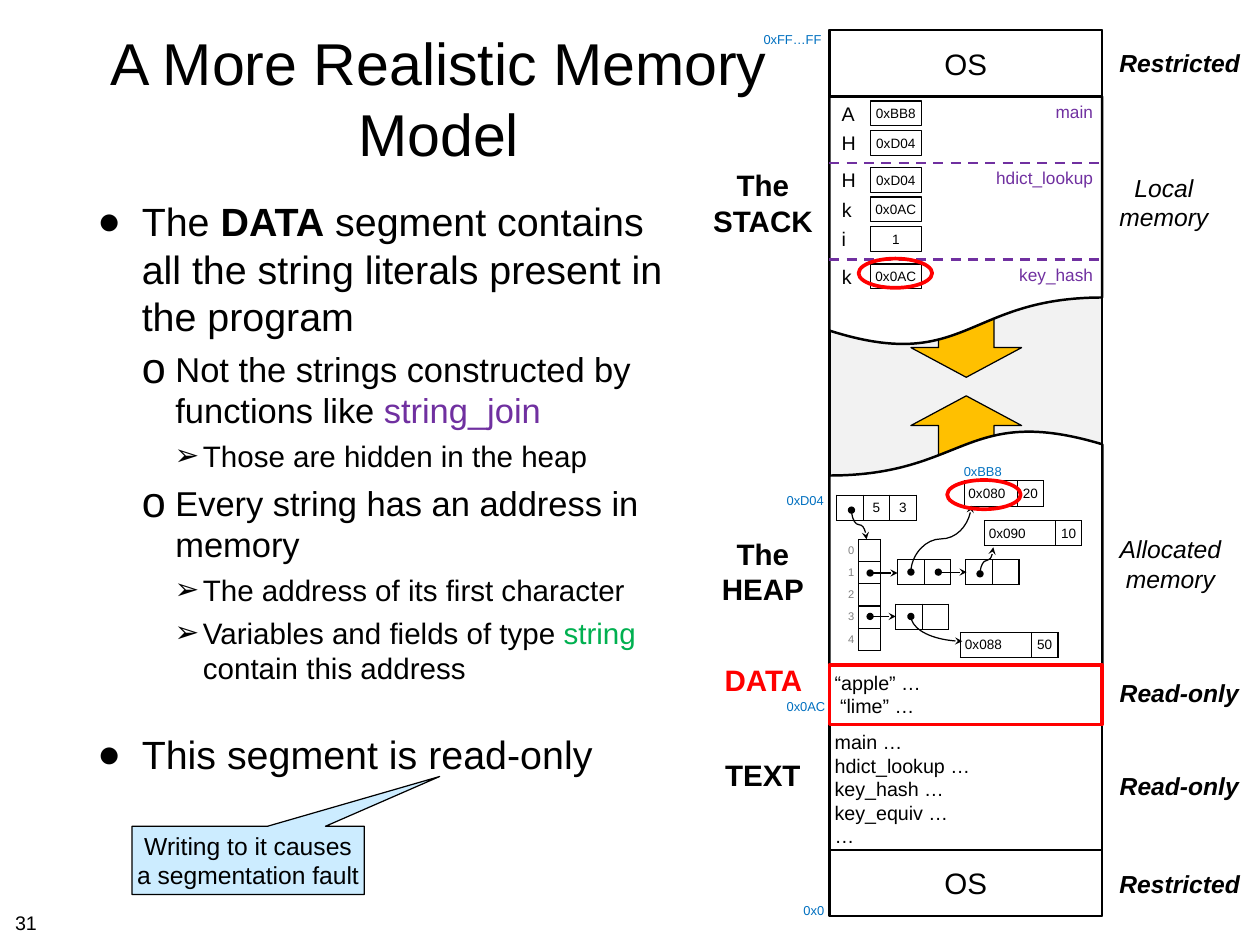
from lxml import etree
from pptx import Presentation
from pptx import util as u
from pptx.dml.color import RGBColor
from pptx.enum import dml, shapes, text
from pptx.oxml import ns

BLACK = RGBColor(0x00, 0x00, 0x00)
WHITE = RGBColor(0xFF, 0xFF, 0xFF)
RED = RGBColor(0xFF, 0x00, 0x00)
GRAY = RGBColor(0x80, 0x80, 0x80)
FREE_SPACE = RGBColor(0xF2, 0xF2, 0xF2)
AMBER = RGBColor(0xFF, 0xC0, 0x00)
PURPLE = RGBColor(0x70, 0x30, 0xA0)
GREEN = RGBColor(0x00, 0xB0, 0x50)
BLUE = RGBColor(0x00, 0x70, 0xC0)
PALE_BLUE = RGBColor(0xCC, 0xEC, 0xFF)

LEFT, CENTER, RIGHT = text.PP_ALIGN.LEFT, text.PP_ALIGN.CENTER, text.PP_ALIGN.RIGHT
TOP, MIDDLE = text.MSO_ANCHOR.TOP, text.MSO_ANCHOR.MIDDLE
KIND = shapes.MSO_SHAPE
NO_TABLE_STYLE = "{2D5ABB26-0587-4C30-8999-92F81FD0307C}"
# bullet, its size in percent, left indent, hanging indent, space before, text size
LEVELS = [("●", 100, 0.5, 0.5, 8, 32), ("o", 125, 0.88, 0.38, 7, 28), ("➢", 100, 1.19, 0.32, 6, 24)]


def sub(parent, tag, **attributes):
    return etree.SubElement(parent, ns.qn(tag), attributes)


class MemorySlide:
    """Holds the text style and the slide, and draws each kind of element."""

    def __init__(self, slide, font="Arial"):
        self.slide, self.font = slide, font

    def style(self, run, size, color=BLACK, bold=False, italic=False):
        run.font.name, run.font.size = self.font, u.Pt(size)
        run.font.bold, run.font.italic = bold, italic
        run.font.color.rgb = color

    def place(self, item, left, top, width, height):
        item.left, item.top = u.Inches(left), u.Inches(top)
        item.width, item.height = u.Inches(width), u.Inches(height)

    def frame(self, frame, inset_x, inset_y, anchor, wrap, grow=False):
        frame.margin_left = frame.margin_right = u.Inches(inset_x)
        frame.margin_top = frame.margin_bottom = u.Inches(inset_y)
        frame.vertical_anchor, frame.word_wrap = anchor, wrap
        fit = text.MSO_AUTO_SIZE
        frame.auto_size = fit.SHAPE_TO_FIT_TEXT if grow else fit.NONE

    def set_text(self, frame, words, size, align=CENTER, **look):
        frame.text = words
        for paragraph in frame.paragraphs:
            paragraph.alignment = align
            for run in paragraph.runs:
                self.style(run, size, **look)

    def title(self, words, *box):
        title = self.slide.shapes.title
        self.place(title, *box)
        self.frame(title.text_frame, 0.06, 0.06, MIDDLE, True)
        self.set_text(title.text_frame, words, 48)

    def bullets(self, items, *box):
        body = self.slide.placeholders[1]
        self.place(body, *box)
        self.frame(body.text_frame, 0.06, 0.06, TOP, True)
        for i, (level, extra_gap, parts) in enumerate(items):
            mark, percent, indent, hanging, before, size = LEVELS[level]
            frame = body.text_frame
            point = frame.add_paragraph() if i else frame.paragraphs[0]
            point.level, point.space_before = level, u.Pt(before + extra_gap)
            props = point._p.get_or_add_pPr()
            props.set("marL", str(u.Inches(indent)))
            props.set("indent", str(-u.Inches(hanging)))
            sub(sub(props, "a:buClr"), "a:srgbClr", val=str(BLACK))
            sub(props, "a:buSzPct", val=str(percent * 1000))
            sub(props, "a:buFont", typeface=self.font)
            sub(props, "a:buChar", char=mark)
            for words, look in parts:
                run = point.add_run()
                run.text = words
                self.style(run, size, **look)

    def label(self, words, size, *box, align=CENTER, inset=(0.1, 0.05), anchor=TOP, grow=True, **look):
        label = self.slide.shapes.add_textbox(*map(u.Inches, box))
        self.frame(label.text_frame, *inset, anchor, False, grow)
        self.set_text(label.text_frame, words, size, align, **look)

    def shape(self, kind, *box, fill=None, line=BLACK, weight=1):
        shape = self.slide.shapes.add_shape(kind, *map(u.Inches, box))
        shape.shadow.inherit = False
        if fill is None:
            shape.fill.background()
        else:
            shape.fill.solid()
            shape.fill.fore_color.rgb = fill
        shape.line.color.rgb, shape.line.width = line, u.Pt(weight)
        return shape

    def segment(self, words, size, top, height, align=CENTER, anchor=MIDDLE, line=BLACK, weight=2):
        segment = self.shape(KIND.RECTANGLE, 9.36, top, 3.08, height, fill=WHITE, line=line, weight=weight)
        self.frame(segment.text_frame, 0.06, 0.06, anchor, False)
        self.set_text(segment.text_frame, words, size, align)

    def line(self, x1, y1, x2, y2, kind=shapes.MSO_CONNECTOR.STRAIGHT, color=BLACK, weight=1):
        line = self.slide.shapes.add_connector(kind, *map(u.Inches, (x1, y1, x2, y2)))
        line.line.color.rgb, line.line.width = color, u.Pt(weight)
        sub(line._element.spPr, "a:effectLst")
        return line

    def pointer(self, x1, y1, x2, y2, curve=None):
        if curve:
            # A curve that leaves vertically is a horizontal one turned by 90 degrees
            cx, cy, dx, dy = (x1 + x2) / 2, (y1 + y2) / 2, (x2 - x1) / 2, (y2 - y1) / 2
            arrow = self.line(cx - dy, cy + dx, cx + dy, cy - dx, shapes.MSO_CONNECTOR.CURVE)
            props = arrow._element.spPr
            props.find(ns.qn("a:xfrm")).set("rot", "5400000")
            props.find(ns.qn("a:prstGeom")).set("prst", curve)
        else:
            arrow = self.line(x1, y1, x2, y2)
        outline = arrow._element.spPr.find(ns.qn("a:ln"))
        sub(outline, "a:headEnd", type="oval")
        sub(outline, "a:tailEnd", type="stealth")

    def cells(self, rows, widths, left, top, height, size=11, aligns=None, open_columns=()):
        box = map(u.Inches, (left, top, sum(widths), height))
        table = self.slide.shapes.add_table(len(rows), len(widths), *box).table
        table.first_row = table.horz_banding = False
        table._tbl.tblPr.find(ns.qn("a:tableStyleId")).text = NO_TABLE_STYLE
        for c, width in enumerate(widths):
            table.columns[c].width = u.Inches(width)
            for r, row in enumerate(rows):
                cell = table.cell(r, c)
                cell.margin_left = cell.margin_right = u.Inches(0.05)
                cell.margin_top = cell.margin_bottom = u.Inches(0.05)
                cell.vertical_anchor = MIDDLE
                if row[c]:
                    color = GRAY if c in open_columns else BLACK
                    self.set_text(cell.text_frame, row[c], size, aligns[c], color=color)
                else:
                    sub(cell.text_frame.paragraphs[0]._p, "a:endParaRPr", sz=str(size * 100))
                if c not in open_columns:
                    for side in "LRTB":
                        border = sub(cell._tc.get_or_add_tcPr(), "a:ln" + side, w=str(u.Pt(1)))
                        sub(sub(border, "a:solidFill"), "a:srgbClr", val=str(BLACK))
                cell.fill.background()


def main():
    deck = Presentation()
    deck.slide_width, deck.slide_height = u.Inches(14.22), u.Inches(10.67)
    memory = MemorySlide(deck.slides.add_slide(deck.slide_layouts[1]))

    # Title and explanation
    memory.title("A More Realistic Memory Model", 1.04, 0.28, 7.82, 1.64)
    memory.bullets([
        (0, 0, [("The ", {}), ("DATA", {"bold": True}),
                (" segment contains all the string literals present in the program", {})]),
        (1, 0, [("Not the strings constructed by functions like ", {}), ("string_join", {"color": PURPLE})]),
        (2, 0, [("Those are hidden in the heap", {})]),
        (1, 0, [("Every string has an address in memory", {})]),
        (2, 0, [("The address of its first character", {})]),
        (2, 0, [("Variables and fields of type ", {}), ("string", {"color": GREEN}),
                (" contain this address", {})]),
        (0, 28, [("This segment is read-only", {})]),
    ], 1.04, 2.17, 6.74, 7.54)

    # Memory column: free space, growth arrows, segments
    memory.shape(KIND.RECTANGLE, 9.36, 0.34, 3.08, 10, fill=FREE_SPACE, weight=2)
    memory.shape(KIND.DOWN_ARROW, 10.28, 3.59, 1.25, 0.67, fill=AMBER)
    memory.shape(KIND.UP_ARROW, 10.28, 4.47, 1.25, 0.67, fill=AMBER)
    for top in (0.34, 9.59):
        memory.segment("OS", 24, top, 0.75)
    code = "main …\nhdict_lookup …\nkey_hash …\nkey_equiv …\n…"
    memory.segment(code, 16, 8.18, 1.42, align=LEFT, anchor=TOP)
    memory.shape(KIND.FLOWCHART_DOCUMENT, 9.36, 1.09, 3.08, 2.83, fill=WHITE, weight=2)
    heap = memory.shape(KIND.FLOWCHART_DOCUMENT, 9.36, 4.84, 3.08, 2.67, fill=WHITE, weight=2)
    heap.rotation = 180
    memory.segment("“apple” …\v “lime” …", 16, 7.51, 0.67, align=LEFT, anchor=TOP, line=RED, weight=3)

    # Stack frames with their variables
    letter_widths = {"A": 0.26, "H": 0.27, "k": 0.22, "i": 0.16}
    for function, top, width, variables in [
        ("main", 1.09, 0.63, [("A", "0xBB8"), ("H", "0xD04")]),
        ("hdict_lookup", 1.84, 1.3, [("H", "0xD04"), ("k", "0x0AC"), ("i", "1")]),
        ("key_hash", 2.93, 1.04, [("k", "0x0AC")]),
    ]:
        if function != "main":
            border = memory.line(9.36, top, 12.44, top, color=PURPLE, weight=2)
            border.line.dash_style = dml.MSO_LINE.DASH
        memory.label(function, 14, 12.44 - width, top, width, 0.34, color=PURPLE)
        for i, (variable, value) in enumerate(variables):
            y = top + 0.335 * i
            memory.label(variable, 16, 9.44, y, letter_widths[variable], 0.38, inset=(0.06, 0.06), anchor=MIDDLE)
            slot = memory.shape(KIND.RECTANGLE, 9.82, y + 0.05, 0.58, 0.28)
            memory.frame(slot.text_frame, 0.05, 0.05, MIDDLE, True)
            memory.set_text(slot.text_frame, value, 11)

    # Heap: dictionary header, hash table, chain nodes, entries
    memory.cells([("", "5", "3")], [0.3] * 3, 9.44, 5.59, 0.28, aligns=[CENTER] * 3)
    buckets = [(str(i), "") for i in range(5)]
    memory.cells(buckets, [0.25] * 2, 9.44, 6.09, 1.25, size=9, aligns=[RIGHT] * 2, open_columns=(0,))
    for left, top in [(10.13, 6.32), (10.11, 6.82), (10.9, 6.32)]:
        memory.cells([("", "")], [0.3] * 2, left, top, 0.28)
    for key, count, width, left, top in [
        ("0x080", "20", 0.6, 10.88, 5.43),
        ("0x090", "10", 0.8, 11.11, 5.88),
        ("0x088", "50", 0.8, 10.84, 7.14),
    ]:
        memory.cells([(key, count)], [width, 0.3], left, top, 0.28, aligns=[LEFT, CENTER])
    for x1, x2, y in [(9.82, 10.13, 6.47), (9.82, 10.11, 6.96), (10.59, 10.91, 6.46)]:
        memory.pointer(x1, y, x2, y)
    memory.pointer(10.28, 6.46, 10.96, 5.71, "curvedConnector3")
    memory.pointer(10.28, 6.96, 10.86, 7.24, "curvedConnector2")
    memory.pointer(11.06, 6.48, 11.21, 6.18, "curvedConnector3")
    memory.pointer(9.61, 5.76, 9.78, 6.09, "curvedConnector3")

    # Addresses
    for address, *box in [("0xFF…FF", 8.52, 0.31, 0.86, 0.28), ("0xD04", 8.78, 5.51, 0.63, 0.28),
                          ("0xBB8", 10.78, 5.18, 0.64, 0.28), ("0x0AC", 8.78, 7.84, 0.67, 0.28),
                          ("0x0", 8.97, 10.14, 0.44, 0.28)]:
        memory.label(address, 10.5, *box, align=LEFT, color=BLUE)

    # Segment names and access rights
    for name, color, *box in [("The\vSTACK", BLACK, 7.94, 1.84, 1.34, 0.91), ("The\vHEAP", BLACK, 8.04, 6, 1.14, 0.91),
                              ("DATA", RED, 8.07, 7.43, 1.09, 0.5), ("TEXT", BLACK, 8.08, 8.5, 1.06, 0.5)]:
        memory.label(name, 24, *box, bold=True, color=color)
    for access, bold, top, width, height in [
        ("Restricted", True, 0.49, 1.57, 0.44), ("Local\vmemory", False, 1.9, 1.21, 0.77),
        ("Allocated\vmemory", False, 5.98, 1.36, 0.77), ("Read-only", True, 7.61, 1.56, 0.44),
        ("Read-only", True, 8.65, 1.56, 0.44), ("Restricted", True, 9.76, 1.57, 0.44),
    ]:
        memory.label(access, 20, 12.53, top, width, height, bold=bold, italic=True)

    # Highlights, callout, slide number
    for left, top in [(9.69, 2.92), (10.69, 5.42)]:
        memory.shape(KIND.OVAL, left, top, 0.83, 0.33, line=RED, weight=3)
    warning = memory.shape(KIND.RECTANGULAR_CALLOUT, 1.49, 9.33, 2.62, 0.77, fill=PALE_BLUE)
    warning.adjustments[0], warning.adjustments[1] = 0.825, -1.23
    memory.frame(warning.text_frame, 0.05, 0.05, MIDDLE, False, grow=True)
    memory.set_text(warning.text_frame, "Writing to it causes\va segmentation fault", 20)
    memory.label("31", 16, 0.11, 10.23, 0.37, 0.35, align=LEFT, inset=(0.06, 0.06), grow=False)

    deck.save("out.pptx")


if __name__ == "__main__":
    main()
